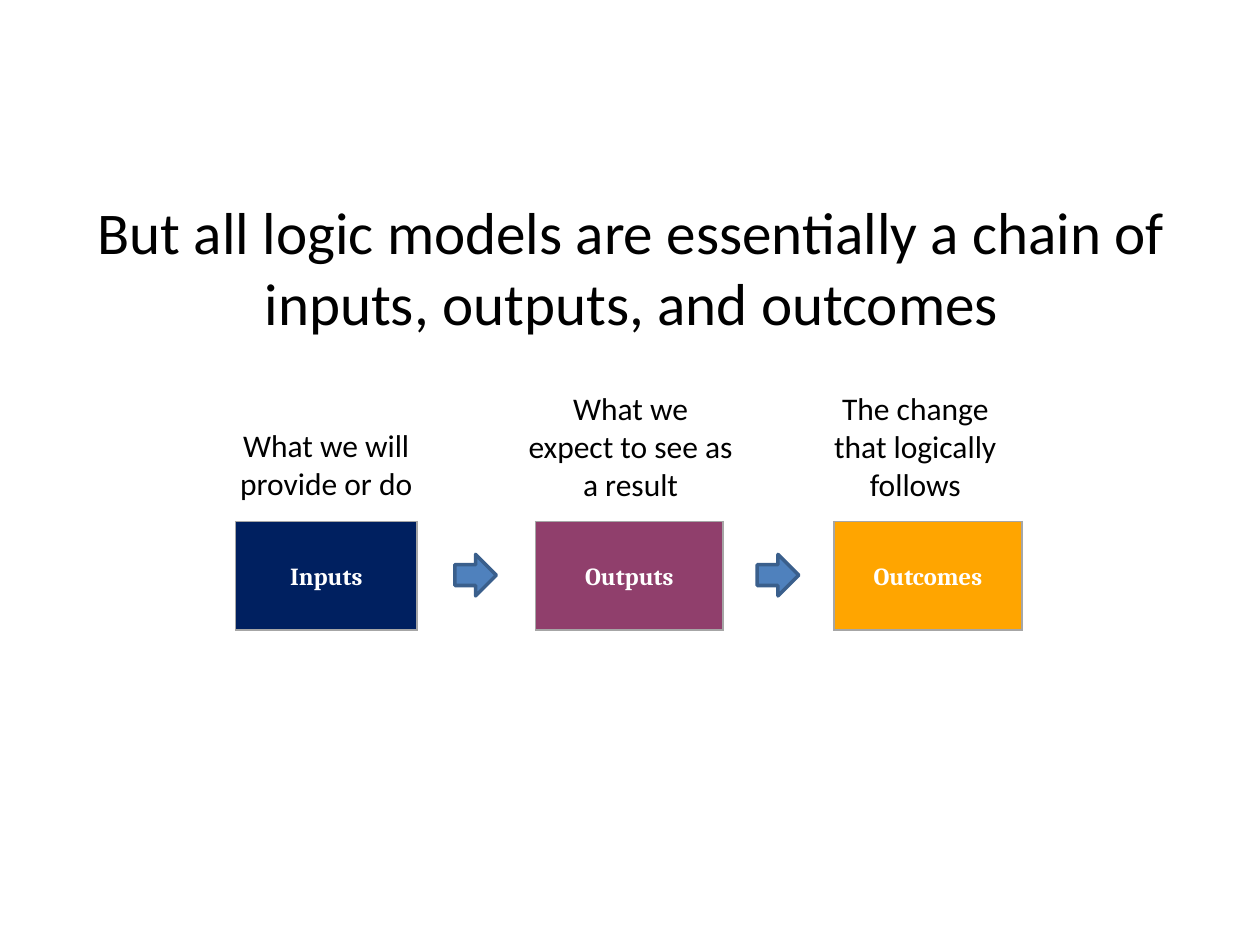
from lxml import etree
from pptx import Presentation
from pptx.dml.color import RGBColor
from pptx.enum.shapes import MSO_SHAPE as SHAPE
from pptx.enum.text import MSO_ANCHOR as ANCHOR, PP_ALIGN as ALIGN
from pptx.oxml.ns import qn
from pptx.util import Inches, Pt

# Per stage: name, fill, box left and width, caption, caption left, top, width and height
STAGES = [
    ("Inputs", "002060", 1.87, 1.44,
     "What we will provide or do", 1.42, 3.33, 2.34, 0.71),
    ("Outputs", "903F6C", 4.25, 1.49,
     "What we expect to see as a result", 4.09, 3.04, 1.83, 1.01),
    ("Outcomes", "FFA500", 6.62, 1.49,
     "The change that logically follows", 6.35, 3.04, 1.83, 1.01),
]
STAGE_TOP, STAGE_HEIGHT = 4.14, 0.86
ARROW_LEFTS, ARROW_TOP, ARROW_SIZE = (3.61, 6.01), 4.4, 0.33


def rgb(value):
    return RGBColor.from_string(value)


def style(p, text, size, font, color, bold=False):
    p.text = text
    p.alignment = ALIGN.CENTER
    p.font.size = Pt(size)
    p.font.name = font
    p.font.bold = bold
    p.font.color.rgb = rgb(color)


def add_text(slide, text, size, left, top, width, height):
    sp = slide.shapes.add_textbox(Inches(left), Inches(top), Inches(width), Inches(height))
    tf = sp.text_frame
    tf.word_wrap = True
    style(tf.paragraphs[0], text, size, "Calibri", "000000")


def set_borders(cell, color, width):
    tc_pr = cell._tc.get_or_add_tcPr()
    for i, side in enumerate(("lnL", "lnR", "lnT", "lnB")):
        # Borders come before the fill in the cell properties
        ln = etree.Element(qn(f"a:{side}"), w=str(Pt(width)))
        fill = etree.SubElement(ln, qn("a:solidFill"))
        etree.SubElement(fill, qn("a:srgbClr"), val=color)
        tc_pr.insert(i, ln)


def add_stage(slide, name, color, left, top, width, height):
    box = [Inches(v) for v in (left, top, width, height)]
    cell = slide.shapes.add_table(1, 1, *box).table.cell(0, 0)
    cell.fill.solid()
    cell.fill.fore_color.rgb = rgb(color)
    set_borders(cell, "A6A6A6", 1)
    cell.vertical_anchor = ANCHOR.MIDDLE
    cell.margin_left = cell.margin_right = Inches(0.04)
    cell.margin_top = cell.margin_bottom = Inches(0.04)
    p = cell.text_frame.paragraphs[0]
    style(p, name, 14, "Cambria", "FFFFFF", bold=True)
    p.line_spacing = 1.15


def add_arrow(slide, left, top, size):
    sp = slide.shapes.add_shape(SHAPE.RIGHT_ARROW, Inches(left), Inches(top),
                                Inches(size), Inches(size))
    sp.shadow.inherit = False
    sp.fill.solid()
    sp.fill.fore_color.rgb = rgb("4F81BD")
    sp.line.color.rgb = rgb("3A5F8C")
    sp.line.width = Pt(2)


def main():
    prs = Presentation()
    prs.slide_width, prs.slide_height = Inches(10), Inches(7.5)
    slide = prs.slides.add_slide(prs.slide_layouts[6])

    # Heading
    add_text(slide, "But all logic models are essentially a chain of "
             "inputs, outputs, and outcomes", 33.8, 0.32, 1.5, 9.39, 0.66)

    # Chain of stages with captions above
    for name, color, left, width, caption, *caption_box in STAGES:
        add_stage(slide, name, color, left, STAGE_TOP, width, STAGE_HEIGHT)
        add_text(slide, caption, 18, *caption_box)

    # Arrows between the stages
    for left in ARROW_LEFTS:
        add_arrow(slide, left, ARROW_TOP, ARROW_SIZE)

    prs.save("out.pptx")


if __name__ == "__main__":
    main()
